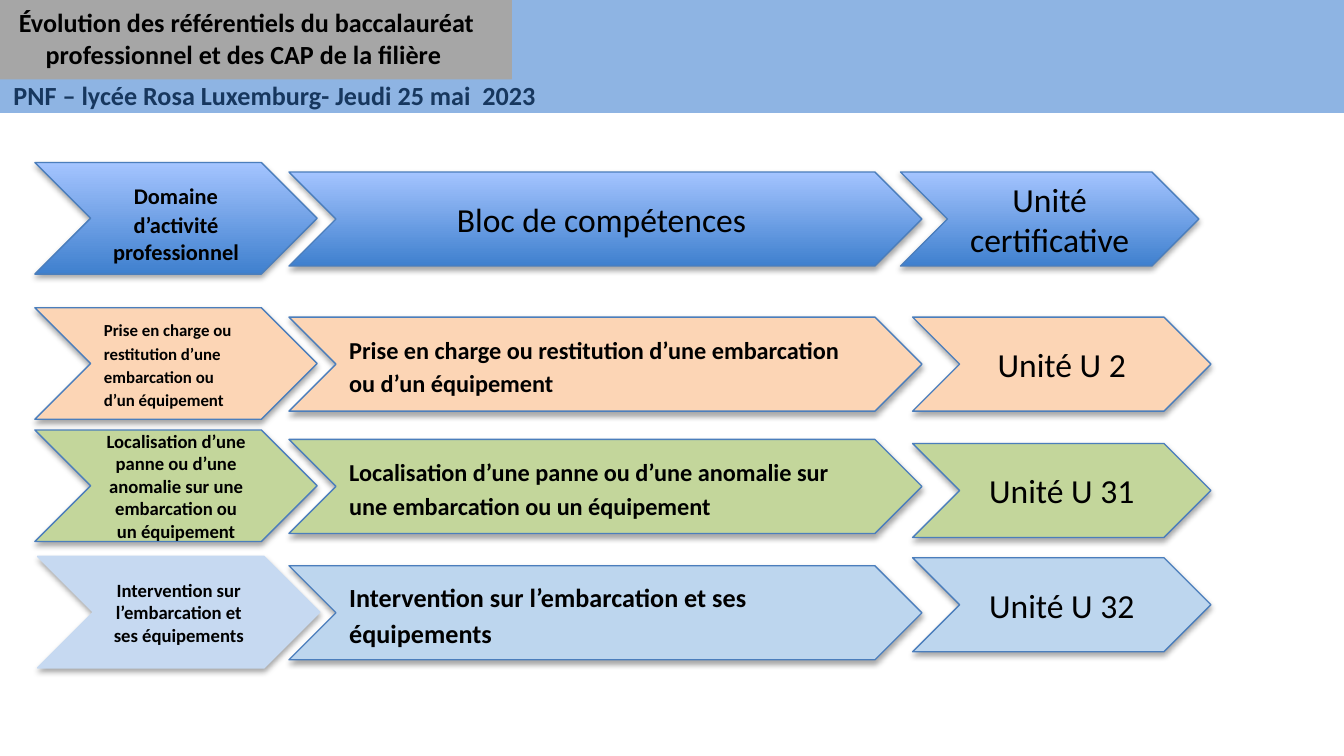
from lxml import etree
from pptx import Presentation
from pptx.dml.color import RGBColor
from pptx.enum.shapes import MSO_SHAPE
from pptx.enum.text import MSO_ANCHOR, PP_ALIGN
from pptx.oxml.ns import qn
from pptx.util import Inches, Pt

RECTANGLE = MSO_SHAPE.RECTANGLE
CHEVRON = MSO_SHAPE.CHEVRON
MIDDLE = MSO_ANCHOR.MIDDLE
CENTER = PP_ALIGN.CENTER
LEFT = PP_ALIGN.LEFT

SLIDE_WIDTH = 10
SLIDE_HEIGHT = SLIDE_WIDTH * 9 / 16

FONT = "Calibri"
BLACK = "000000"
OUTLINE = "4B7EBC"
PEACH, GREEN, SKY, PALE_BLUE = "FCD5B5", "C3D69B", "BDD6EE", "C6D9F1"
HEADER_GRADIENT = ("3F80CE", "A4C4FF")

DOMAIN_LEFT, DOMAIN_SIZE = 0.26, (2.1, 0.83)
BLOCK_LEFT, BLOCK_SIZE = 2.15, (4.71, 0.7)
UNIT_LEFT, UNIT_SIZE = 6.79, (2.22, 0.7)

HANDOVER = "Prise en charge ou restitution d’une embarcation ou d’un équipement"
DIAGNOSIS = "Localisation d’une panne ou d’une anomalie sur une embarcation ou un équipement"
REPAIR = "Intervention sur l’embarcation et ses équipements"


def color(hex_string):
    return RGBColor.from_string(hex_string)


def format_run(run, size, bold, hex_string=BLACK):
    run.font.name = FONT
    run.font.size = Pt(size)
    run.font.bold = bold
    run.font.color.rgb = color(hex_string)


def add_band(slide, width, height, fill):
    band = slide.shapes.add_shape(RECTANGLE, 0, 0, Inches(width), Inches(height))
    band.shadow.inherit = False
    band.fill.solid()
    band.fill.fore_color.rgb = color(fill)
    band.line.fill.background()


def add_heading(slide, box, text, hex_string):
    heading = slide.shapes.add_textbox(*[Inches(value) for value in box])
    frame = heading.text_frame
    frame.word_wrap = True
    frame.text = text
    paragraph = frame.paragraphs[0]
    paragraph.alignment = CENTER
    format_run(paragraph.runs[0], 14, True, hex_string)


def add_soft_shadow(shape):
    """Cast a short downward shadow in 35 % black."""
    shape.shadow.inherit = False
    effects = shape.element.spPr.find(qn("a:effectLst"))
    shadow = etree.SubElement(effects, qn("a:outerShdw"), blurRad="40000",
                              dist="23000", dir="5400000", rotWithShape="0")
    black = etree.SubElement(shadow, qn("a:srgbClr"), val=BLACK)
    etree.SubElement(black, qn("a:alpha"), val="35000")


def fill_shape(shape, fill):
    """Fill with one colour, or with a (bottom, top) gradient."""
    if isinstance(fill, str):
        shape.fill.solid()
        shape.fill.fore_color.rgb = color(fill)
        return
    shape.fill.gradient()
    shape.fill.gradient_angle = 90
    for position, (stop, hex_string) in enumerate(zip(shape.fill.gradient_stops, fill)):
        stop.position = position
        stop.color.rgb = color(hex_string)


def add_chevron(slide, left, top, size, fill, runs, bold=False,
                alignment=CENTER, line_spacing=None, outline=OUTLINE):
    """Add a chevron whose text is a list of (text, point size) runs."""
    width, height = size
    chevron = slide.shapes.add_shape(CHEVRON, Inches(left), Inches(top),
                                     Inches(width), Inches(height))
    fill_shape(chevron, fill)
    chevron.line.color.rgb = color(outline)
    chevron.line.width = Pt(0.75)
    add_soft_shadow(chevron)

    frame = chevron.text_frame
    frame.word_wrap = True
    frame.vertical_anchor = MIDDLE
    paragraph = frame.paragraphs[0]
    paragraph.alignment = alignment
    paragraph.line_spacing = line_spacing
    for text, points in runs:
        run = paragraph.add_run()
        run.text = text
        format_run(run, points, bold)


def add_header_row(slide):
    add_chevron(slide, DOMAIN_LEFT, 1.21, DOMAIN_SIZE, HEADER_GRADIENT,
                [("Domaine", 12), (" ", 18), ("d’activité professionnel", 12)], bold=True)
    add_chevron(slide, BLOCK_LEFT, 1.28, BLOCK_SIZE, HEADER_GRADIENT,
                [("Bloc de compétences ", 18)])
    add_chevron(slide, 6.7, 1.28, UNIT_SIZE, HEADER_GRADIENT,
                [("Unité certificative", 18)])


def add_block_and_unit(slide, fill, block_top, block_text, block_points, unit_top, unit):
    add_chevron(slide, BLOCK_LEFT, block_top, BLOCK_SIZE, fill,
                [(block_text, block_points)], bold=True, alignment=LEFT, line_spacing=1.15)
    add_chevron(slide, UNIT_LEFT, unit_top, UNIT_SIZE, fill, [(unit, 18)])


def main():
    presentation = Presentation()
    presentation.slide_width = Inches(SLIDE_WIDTH)
    presentation.slide_height = Inches(SLIDE_HEIGHT)
    slide = presentation.slides.add_slide(presentation.slide_layouts[6])

    add_band(slide, SLIDE_WIDTH, 0.84, "8EB4E3")
    add_band(slide, 3.81, 0.59, "A6A6A6")
    add_heading(slide, (-0.5, 0.54, 5.09, 0.34),
                "PNF – lycée Rosa Luxemburg- Jeudi 25 mai  2023", "17375E")

    add_header_row(slide)
    add_chevron(slide, DOMAIN_LEFT, 2.29, DOMAIN_SIZE, PEACH, [(HANDOVER, 9)],
                bold=True, alignment=LEFT, line_spacing=1.15)
    add_chevron(slide, DOMAIN_LEFT, 3.2, DOMAIN_SIZE, GREEN, [(DIAGNOSIS, 10)], bold=True)
    add_chevron(slide, 0.28, 4.14, DOMAIN_SIZE, PALE_BLUE, [(REPAIR, 10)],
                bold=True, outline=PALE_BLUE)

    add_block_and_unit(slide, PEACH, 2.36, HANDOVER, 13, 2.36, "Unité U 2")
    add_block_and_unit(slide, GREEN, 3.27, DIAGNOSIS, 13, 3.3, "Unité U 31")
    add_block_and_unit(slide, SKY, 4.21, REPAIR, 14, 4.15, "Unité U 32")

    add_heading(slide, (0, 0, 3.67, 0.57),
                "Évolution des référentiels du baccalauréat professionnel "
                "et des CAP de la filière ", BLACK)

    presentation.save("out.pptx")


if __name__ == "__main__":
    main()
